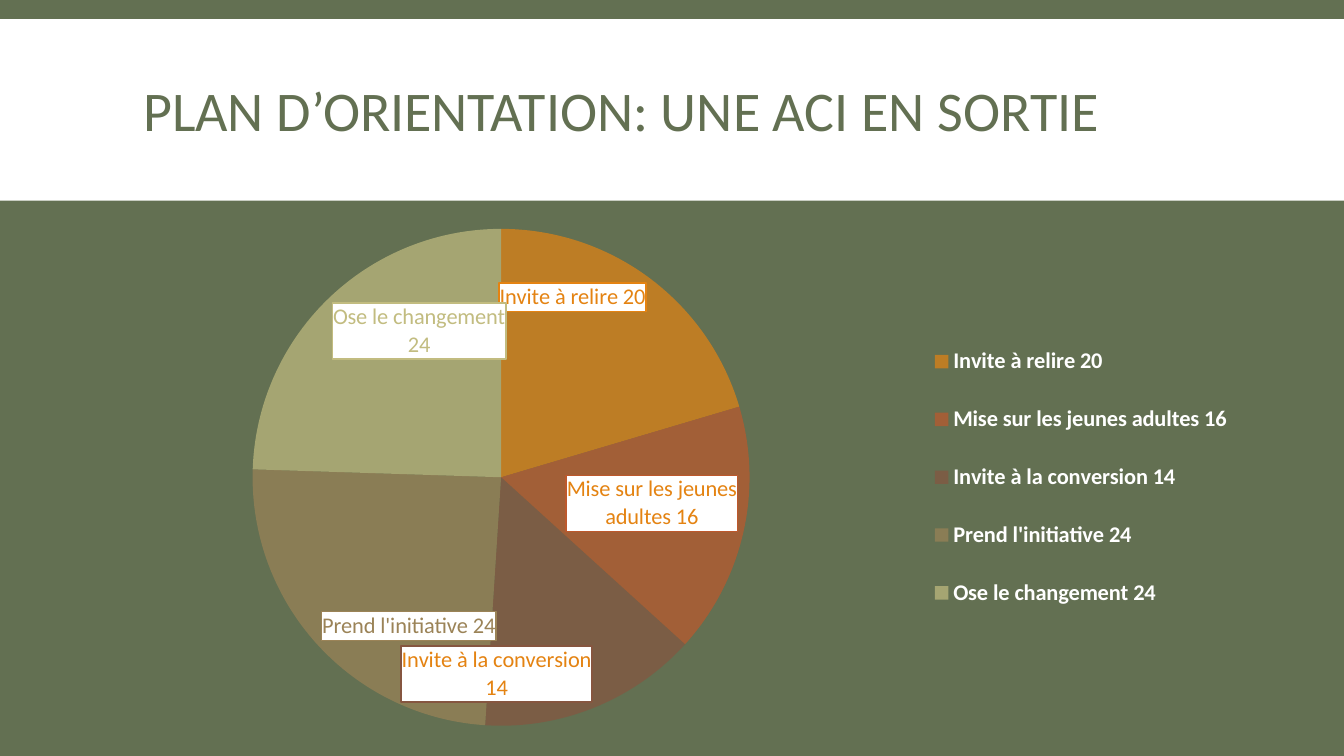
from dataclasses import dataclass

from lxml import etree
from pptx import Presentation
from pptx.chart.data import CategoryChartData
from pptx.dml.color import RGBColor
from pptx.enum.chart import XL_CHART_TYPE, XL_LABEL_POSITION, XL_LEGEND_POSITION
from pptx.enum.shapes import MSO_SHAPE
from pptx.enum.text import MSO_ANCHOR, MSO_AUTO_SIZE, PP_ALIGN
from pptx.oxml import parse_xml
from pptx.oxml.ns import nsdecls, qn
from pptx.util import Inches, Pt

PIE = XL_CHART_TYPE.PIE
INSIDE_END = XL_LABEL_POSITION.INSIDE_END
LEGEND_RIGHT = XL_LEGEND_POSITION.RIGHT
RECTANGLE = MSO_SHAPE.RECTANGLE
MIDDLE = MSO_ANCHOR.MIDDLE
NO_AUTOFIT = MSO_AUTO_SIZE.NONE
LEFT = PP_ALIGN.LEFT
TITLE_ONLY_LAYOUT = 5


@dataclass(frozen=True)
class Theme:
    font: str = "Calibri"
    green: str = "637052"
    white: str = "FFFFFF"
    orange: str = "E48312"
    rust: str = "BD582C"
    brown: str = "865640"
    tan: str = "9B8357"
    olive: str = "C2BC80"
    slice_opacity: int = 70
    title_size: int = 40
    chart_size: int = 10
    label_size: int = 16


THEME = Theme()

# Category, value, slice colour, label text colour
ORIENTATIONS = [
    ("Invite à relire 20", 20, THEME.orange, THEME.orange),
    ("Mise sur les jeunes adultes 16", 16, THEME.rust, THEME.orange),
    ("Invite à la conversion 14", 14, THEME.brown, THEME.orange),
    ("Prend l'initiative 24", 24, THEME.tan, THEME.tan),
    ("Ose le changement 24", 24, THEME.olive, THEME.olive),
]


def rgb(color):
    return RGBColor.from_string(color)


def style_font(font, size, color, bold=False):
    font.name = THEME.font
    font.size = Pt(size)
    font.bold = bold
    font.color.rgb = rgb(color)


def add_title(slide, text):
    title = slide.shapes.title
    title.left, title.top = Inches(1.32), Inches(0.31)
    title.width, title.height = Inches(10.7), Inches(1.65)
    frame = title.text_frame
    frame.text = text
    frame.word_wrap = True
    frame.auto_size = NO_AUTOFIT
    frame.vertical_anchor = MIDDLE
    paragraph = frame.paragraphs[0]
    paragraph.alignment = LEFT
    paragraph.line_spacing = 0.85
    style_font(paragraph.font, THEME.title_size, THEME.green)


def add_title_band(slide, width):
    band = slide.shapes.add_shape(RECTANGLE, 0, Inches(0.19), width, Inches(1.8))
    band.shadow.inherit = False
    band.fill.solid()
    band.fill.fore_color.rgb = rgb(THEME.white)
    band.line.fill.background()
    slide.shapes.title._element.addprevious(band._element)


def manual_layout(x, y, width, height, inner=False):
    """Return a c:layout element with fractions of the chart area."""
    target = '<c:layoutTarget val="inner"/>' if inner else ""
    return parse_xml(
        f'<c:layout {nsdecls("c")}><c:manualLayout>{target}'
        '<c:xMode val="edge"/><c:yMode val="edge"/>'
        f'<c:x val="{x}"/><c:y val="{y}"/><c:w val="{width}"/><c:h val="{height}"/>'
        "</c:manualLayout></c:layout>"
    )


def place_plot(chart):
    plot_area = chart.plots[0]._element.getparent()
    for layout in plot_area.findall(qn("c:layout")):
        plot_area.remove(layout)
    plot_area.insert(0, manual_layout(0.18, 0.03, 0.39, 0.95, inner=True))


def add_legend(chart):
    chart.has_legend = True
    legend = chart.legend
    legend.position = LEGEND_RIGHT
    legend.include_in_layout = False
    style_font(legend.font, THEME.label_size, THEME.white, bold=True)
    element = legend._element
    for layout in element.findall(qn("c:layout")):
        element.remove(layout)
    element.find(qn("c:legendPos")).addnext(manual_layout(0.7, 0.2, 0.26, 0.61))


def fill_slice(point, color):
    point.format.fill.solid()
    point.format.fill.fore_color.rgb = rgb(color)
    point.format.line.fill.background()
    for fill_color in point.format.fill._xPr.iter(qn("a:srgbClr")):
        alpha = etree.SubElement(fill_color, qn("a:alpha"))
        alpha.set("val", str(THEME.slice_opacity * 1000))


def add_slice_label(series, index, border_color, text_color):
    """Show the category name in a white box outlined in the slice colour."""
    label = series.points[index].data_label
    style_font(label.font, THEME.label_size, text_color)
    label.position = INSIDE_END
    element = series._element.xpath(f"c:dLbls/c:dLbl[c:idx/@val='{index}']")[0]
    element.find(qn("c:showVal")).set("val", "0")
    element.find(qn("c:showPercent")).set("val", "0")
    element.find(qn("c:showCatName")).set("val", "1")
    element.find(qn("c:txPr")).addprevious(parse_xml(
        f'<c:spPr {nsdecls("c", "a")}>'
        f'<a:solidFill><a:srgbClr val="{THEME.white}"/></a:solidFill>'
        f'<a:ln w="{Pt(1)}"><a:solidFill><a:srgbClr val="{border_color}"/>'
        "</a:solidFill></a:ln></c:spPr>"
    ))


def add_orientation_pie(slide):
    data = CategoryChartData()
    data.categories = [category for category, *_ in ORIENTATIONS]
    data.add_series("Series 1", [value for _, value, *_ in ORIENTATIONS])
    chart = slide.shapes.add_chart(
        PIE, Inches(0.23), Inches(2.11), Inches(12.64), Inches(5.2), data
    ).chart
    chart.has_title = False
    style_font(chart.font, THEME.chart_size, THEME.white)
    plot = chart.plots[0]
    plot.vary_by_categories = True
    series = plot.series[0]
    for index, (_, _, slice_color, text_color) in enumerate(ORIENTATIONS):
        fill_slice(series.points[index], slice_color)
        add_slice_label(series, index, slice_color, text_color)
    place_plot(chart)
    add_legend(chart)


def main():
    presentation = Presentation()
    presentation.slide_width = Inches(13.33)
    presentation.slide_height = Inches(7.5)
    slide = presentation.slides.add_slide(presentation.slide_layouts[TITLE_ONLY_LAYOUT])
    slide.background.fill.solid()
    slide.background.fill.fore_color.rgb = rgb(THEME.green)
    add_title_band(slide, presentation.slide_width)
    add_title(slide, "PLAN D’ORIENTATION: UNE ACI EN SORTIE")
    add_orientation_pie(slide)
    presentation.save("out.pptx")


if __name__ == "__main__":
    main()
